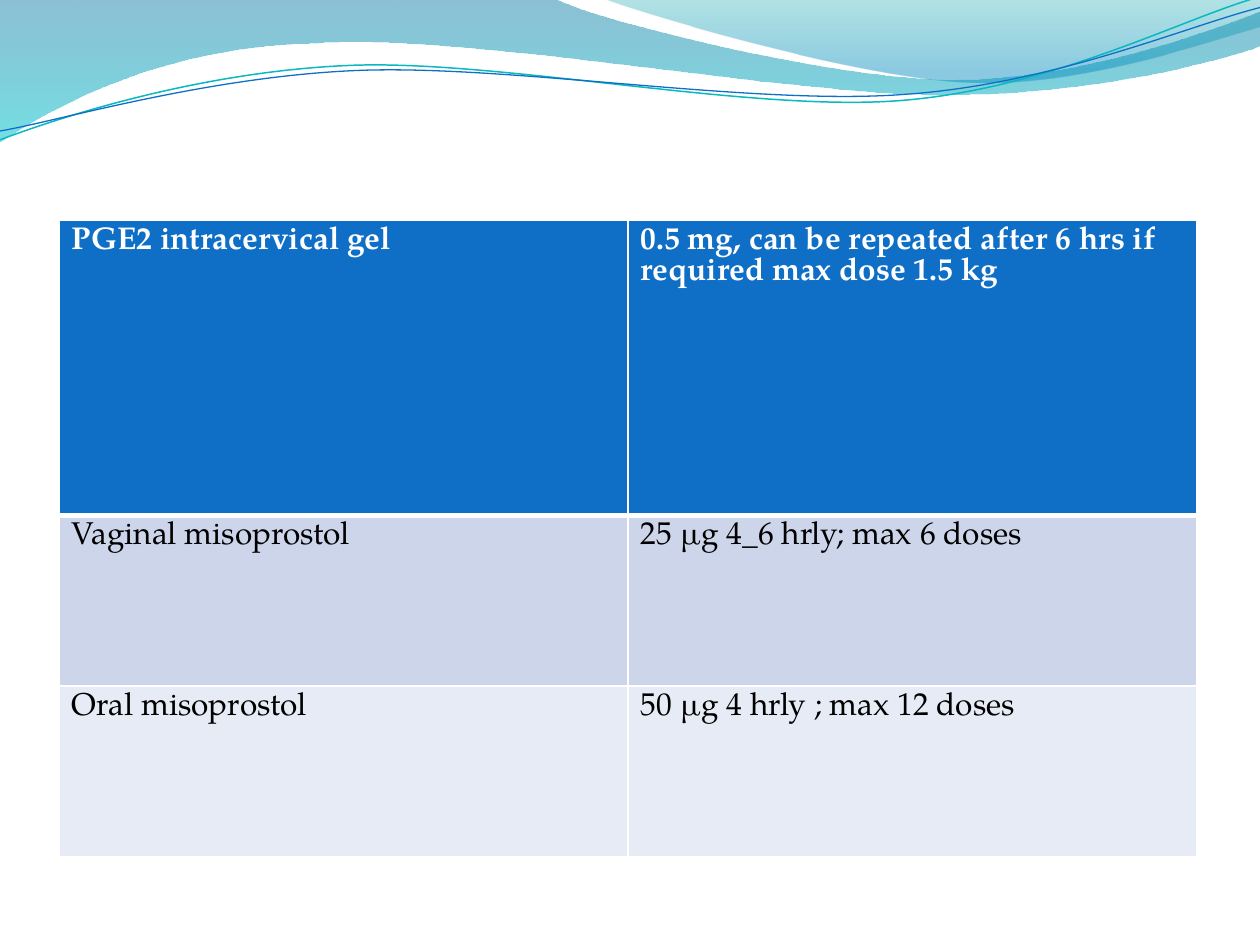
from lxml.etree import SubElement
from pptx import Presentation
from pptx.dml.color import RGBColor
from pptx.oxml.ns import qn
from pptx.util import Inches, Pt

FONT = "TeX Gyre Pagella"
WHITE = RGBColor(0xFF, 0xFF, 0xFF)
BLACK = RGBColor(0x00, 0x00, 0x00)
BLUE = RGBColor(0x0F, 0x6F, 0xC6)
TEAL = RGBColor(0x0A, 0xB8, 0xBF)
BAND_DARK = RGBColor(0xCC, 0xD5, 0xEA)
BAND_LIGHT = RGBColor(0xE7, 0xEB, 0xF5)
DEEP_BLUE = RGBColor(0x00, 0x74, 0xA1)
AQUA = RGBColor(0x00, 0xC6, 0xCF)
SEA_GREEN = RGBColor(0x00, 0xA1, 0xA9)
SKY_BLUE = RGBColor(0x00, 0x8B, 0xBF)

# Content
DOSES = [
    ("PGE2 intracervical gel",
     "0.5 mg, can be repeated after 6 hrs if required max dose 1.5 kg"),
    ("Vaginal misoprostol", "25 µg 4_6 hrly; max 6 doses"),
    ("Oral misoprostol", "50 µg 4 hrly ; max 12 doses"),
]
ROW_FILLS = [BLUE, BAND_DARK, BAND_LIGHT]
TABLE_LEFT, TABLE_TOP, TABLE_WIDTH, TABLE_HEIGHT = 0.47, 1.75, 9.03, 5.05
HEADER_HEIGHT = 2.34

# Outlines: a pair is a straight step, six numbers are a Bézier curve.
# Gradient stops: position, colour, opacity in percent.
BANDS = [
    {"outline": [(0, 0), (4.4, -0.01),
                 (4.76, 0.17, 6.64, 0.63, 7.58, 0.63),
                 (8.53, 0.63, 9.58, 0.26, 10, 0.09), (10.01, 0.36),
                 (9.83, 0.44, 8.7, 0.76, 7.46, 0.75),
                 (6.22, 0.75, 3.82, 0.28, 2.57, 0.34),
                 (1.29, 0.36, 0.46, 0.83, -0.01, 1.13)],
     "stops": [(0, DEEP_BLUE, 45), (1, AQUA, 55)]},
    {"outline": [(4.79, -0.01),
                 (5.09, 0.11, 6.82, 0.62, 7.69, 0.65),
                 (8.56, 0.69, 9.61, 0.32, 10, 0.21), (10, 0)],
     "stops": [(0, SEA_GREEN, 30), (0.8, SKY_BLUE, 45)]},
]
WAVES = [
    {"outline": [(0, 1.11), (0.48, 0.93, 1.58, 0.57, 2.77, 0.52),
                 (3.95, 0.47, 5.93, 0.89, 7.13, 0.8),
                 (8.33, 0.71, 9.38, 0.15, 9.98, -0.02)],
     "color": TEAL, "width": 0.85},
    {"outline": [(0, 1.04), (0.47, 0.96, 1.64, 0.61, 2.83, 0.56),
                 (4.03, 0.51, 5.97, 0.84, 7.17, 0.75),
                 (8.36, 0.67, 9.41, 0.21, 10, 0.06)],
     "color": BLUE, "width": 0.75},
]


def add_outline(page, outline, close):
    """Draw every point as a straight step, then join triples into curves."""
    points = [(Inches(step[i]), Inches(step[i + 1]))
              for step in outline for i in range(0, len(step), 2)]
    builder = page.shapes.build_freeform(*points[0])
    builder.add_line_segments(points[1:], close=close)
    shape = builder.convert_to_shape()
    shape.shadow.inherit = False
    steps = iter(list(shape.element.spPr.iter(qn("a:lnTo"))))
    for step in outline[1:]:
        first = next(steps)
        if len(step) == 6:
            curve = first.makeelement(qn("a:cubicBezTo"), {})
            first.addprevious(curve)
            for piece in (first, next(steps), next(steps)):
                curve.append(piece[0])
                piece.getparent().remove(piece)
    return shape


def add_band(page, outline, stops):
    band = add_outline(page, outline, close=True)
    band.line.fill.background()
    band.fill.gradient()
    band.fill.gradient_angle = 270
    for stop, (position, color, _) in zip(band.fill.gradient_stops, stops):
        stop.position = position
        stop.color.rgb = color
    colors = band.element.spPr.iter(qn("a:srgbClr"))
    for color, (_, _, opacity) in zip(colors, stops):
        SubElement(color, qn("a:alpha"), val=str(opacity * 1000))


def add_wave(page, outline, color, width):
    wave = add_outline(page, outline, close=False)
    wave.fill.background()
    wave.line.color.rgb = color
    wave.line.width = Pt(width)


def write(cell, text, size=18, color=BLACK, bold=False):
    span = cell.text_frame.paragraphs[0].add_run()
    span.text = text
    span.font.name = FONT
    span.font.size = Pt(size)
    span.font.bold = bold
    span.font.color.rgb = color


def add_borders(cell, bottom):
    properties = cell._tc.get_or_add_tcPr()
    widths = {"a:lnL": 1, "a:lnR": 1, "a:lnT": 1, "a:lnB": bottom}
    for place, (tag, width) in enumerate(widths.items()):
        line = properties.makeelement(qn(tag), {"w": str(Pt(width))})
        properties.insert(place, line)
        fill = SubElement(line, qn("a:solidFill"))
        SubElement(fill, qn("a:srgbClr"), val=str(WHITE))


def add_dose_table(page):
    rows, columns = len(DOSES), len(DOSES[0])
    table = page.shapes.add_table(
        rows, columns, Inches(TABLE_LEFT), Inches(TABLE_TOP),
        Inches(TABLE_WIDTH), Inches(TABLE_HEIGHT)).table
    body_height = (TABLE_HEIGHT - HEADER_HEIGHT) / (rows - 1)
    for column in table.columns:
        column.width = Inches(TABLE_WIDTH / columns)
    for r, texts in enumerate(DOSES):
        header = r == 0
        table.rows[r].height = Inches(HEADER_HEIGHT if header else body_height)
        for c, text in enumerate(texts):
            cell = table.cell(r, c)
            cell.fill.solid()
            cell.fill.fore_color.rgb = ROW_FILLS[r]
            write(cell, text, color=WHITE if header else BLACK, bold=header)
            add_borders(cell, bottom=3 if header else 1)


def main():
    deck = Presentation()
    deck.slide_width, deck.slide_height = Inches(10), Inches(7.5)
    page = deck.slides.add_slide(deck.slide_layouts[6])
    for band in BANDS:
        add_band(page, **band)
    for wave in WAVES:
        add_wave(page, **wave)
    add_dose_table(page)
    deck.save("out.pptx")


if __name__ == "__main__":
    main()
